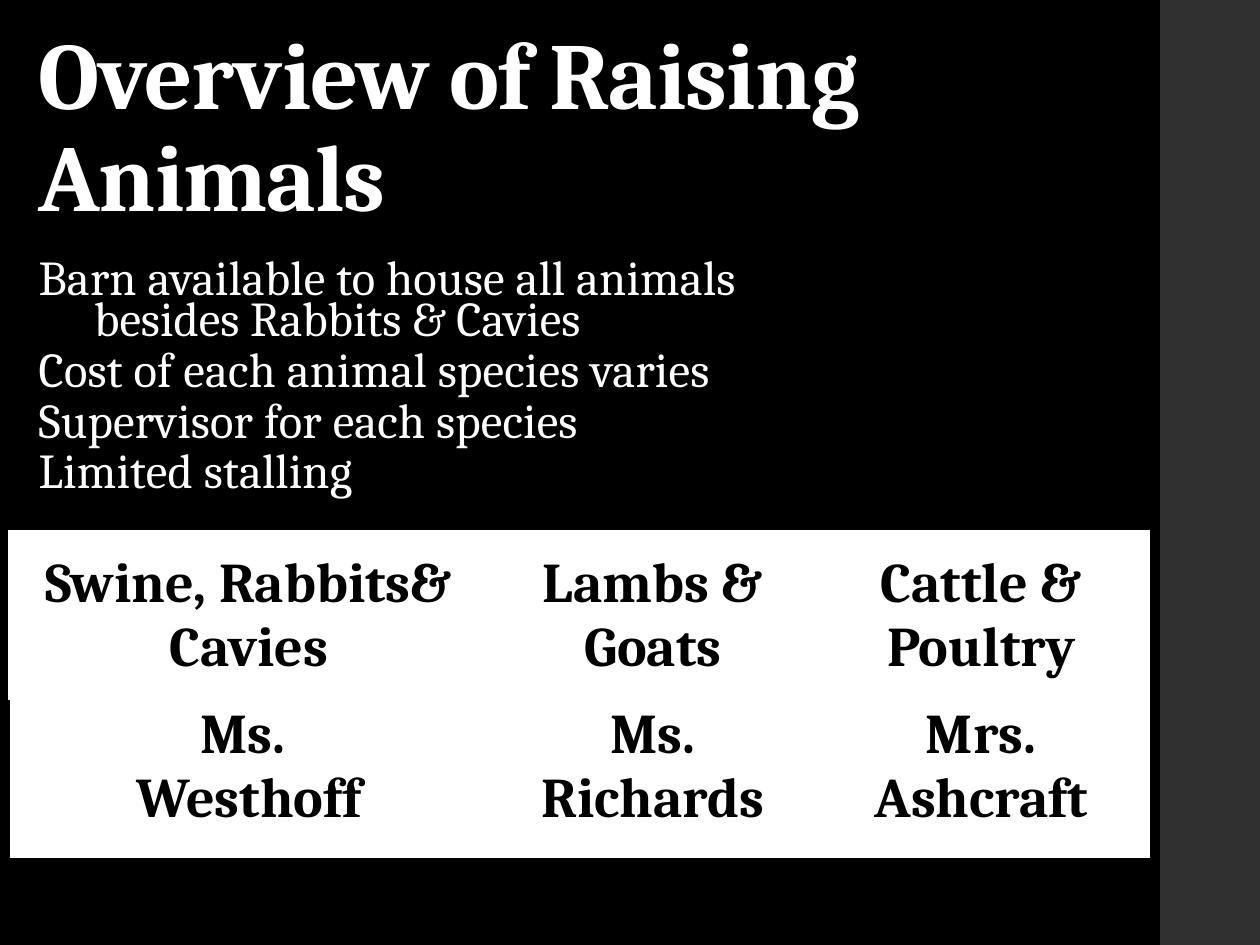
from pptx import Presentation
from pptx.dml.color import RGBColor
from pptx.enum.shapes import MSO_SHAPE
from pptx.enum.text import MSO_ANCHOR, PP_ALIGN
from pptx.oxml import parse_xml
from pptx.oxml.ns import nsdecls
from pptx.util import Cm, Pt

RECT = MSO_SHAPE.RECTANGLE
TOP, BOTTOM = MSO_ANCHOR.TOP, MSO_ANCHOR.BOTTOM
CENTER = PP_ALIGN.CENTER
BLACK, WHITE, GRAY = "000000", "FFFFFF", "303030"


def paint(fill, color):
    fill.solid()
    fill.fore_color.rgb = RGBColor.from_string(color)


class Deck:
    font = "Cambria"

    def __init__(self, wide, high):
        self.prs = Presentation()
        self.prs.slide_width, self.prs.slide_height = Cm(wide), Cm(high)
        self.slide = self.prs.slides.add_slide(self.prs.slide_layouts[6])
        paint(self.slide.background.fill, BLACK)

    def bar(self, x, y, w, h, color):
        box = self.slide.shapes.add_shape(RECT, Cm(x), Cm(y), Cm(w), Cm(h))
        box.shadow.inherit = False
        paint(box.fill, color)
        box.line.fill.background()

    def run(self, para, text, size, color, bold=False, gap=0):
        run = para.add_run()
        run.text = text
        run.font.name, run.font.size, run.font.bold = self.font, Pt(size), bold
        paint(run.font.fill, color)
        if gap:
            run._r.get_or_add_rPr().set("spc", str(gap))

    def text(self, x, y, w, h, lines, size, space, anchor=TOP, bold=False):
        """Each line is (text, left margin in cm, space before, letter gap)."""
        box = self.slide.shapes.add_textbox(Cm(x), Cm(y), Cm(w), Cm(h))
        frame = box.text_frame
        frame.word_wrap, frame.vertical_anchor = True, anchor
        for i, (line, left, before, gap) in enumerate(lines):
            para = frame.add_paragraph() if i else frame.paragraphs[0]
            para.line_spacing, para.space_before = space, Pt(before)
            if left:
                para.level = 1
                props = para._p.get_or_add_pPr()
                props.set("marL", str(Cm(left)))
                props.set("indent", "0")
            self.run(para, line, size, WHITE, bold, gap)

    def cell(self, cell, lines, anchor):
        paint(cell.fill, WHITE)
        cell.vertical_anchor = anchor
        cell.margin_left, cell.margin_right = Cm(0.2), Cm(0.28)
        cell.margin_top, cell.margin_bottom = Cm(0.05), Cm(0.4)
        frame = cell.text_frame
        for i, line in enumerate(lines):
            para = frame.add_paragraph() if i else frame.paragraphs[0]
            para.alignment = CENTER
            self.run(para, line, 32, BLACK, True)

    def edge(self, cell, color):
        cell._tc.get_or_add_tcPr().insert(0, parse_xml(
            f'<a:lnL {nsdecls("a")} w="12700"><a:solidFill>'
            f'<a:srgbClr val="{color}"/></a:solidFill></a:lnL>'))

    def table(self, x, y, cols, rows, data):
        table = self.slide.shapes.add_table(
            len(rows), len(cols), Cm(x), Cm(y), Cm(sum(cols)), Cm(sum(rows))).table
        for col, wide in zip(table.columns, cols):
            col.width = Cm(wide)
        for row, high, texts, anchor in zip(table.rows, rows, data, (BOTTOM, TOP)):
            row.height = Cm(high)
            for cell, lines in zip(row.cells, texts):
                self.cell(cell, lines, anchor)
        return table


def main():
    deck = Deck(25.4, 19.05)

    # Side band
    deck.bar(23.39, 0, 2.01, 19.05, GRAY)

    # Title
    deck.text(0.53, 2.9, 20.3, 1.9, [("Overview of Raising Animals", 0, 0, -50)],
              54, 0.9, BOTTOM, True)

    # Main points
    deck.text(0.53, 5.18, 22.99, 5.51, [
        ("Barn available to house all animals", 0, 0, 10),
        ("besides Rabbits & Cavies", 1.12, 0, 0),
        ("Cost of each animal species varies", 0, 5.6, 10),
        ("Supervisor for each species", 0, 5.6, 10),
        ("Limited stalling", 0, 5.6, 10),
    ], 27.8, 0.7)

    # Supervisors by species
    table = deck.table(0.18, 10.69, (9.75, 6.55, 6.68), (3.43, 2.67), [
        [["Swine,\u00a0Rabbits&", "Cavies"], ["Lambs & Goats"], ["Cattle & Poultry"]],
        [["Ms. ", "Westhoff"], ["Ms. Richards"], ["Mrs. Ashcraft"]],
    ])
    deck.edge(table.cell(1, 0), BLACK)

    deck.prs.save("out.pptx")


if __name__ == "__main__":
    main()
